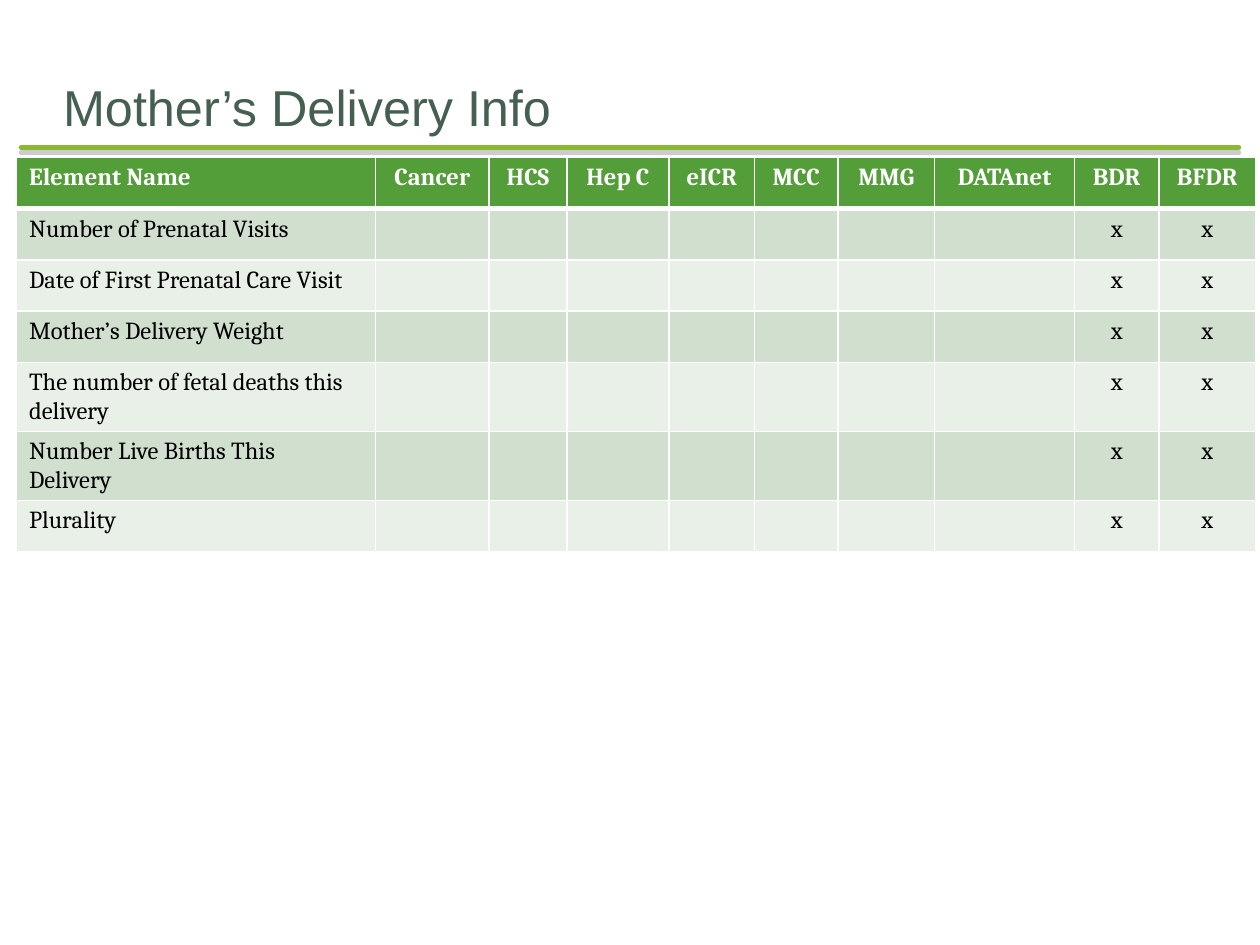
"""Builds the slide that shows which sources hold the mother's delivery elements."""
from dataclasses import dataclass

from lxml import etree
from pptx import Presentation
from pptx import util as u
from pptx.dml.color import RGBColor
from pptx.enum import shapes, text
from pptx.oxml import parse_xml
from pptx.oxml.ns import nsdecls, qn


@dataclass(frozen=True)
class Theme:
    heading_font: str = "Arial"
    table_font: str = "Cambria"
    heading_size: float = 28.8
    table_size: float = 14
    heading: str = "455F51"
    rule: str = "8AB833"
    rule_shadow: str = "808080"
    header_fill: str = "549E39"
    bands: tuple = ("D1DFCE", "E9F0E8")
    grid: str = "FFFFFF"
    header_text: str = "FFFFFF"
    body_text: str = "000000"


def write(frame, words, *, font, size, color, bold=False, align=text.PP_ALIGN.LEFT):
    paragraph = frame.paragraphs[0]
    paragraph.alignment = align
    run = paragraph.add_run()
    run.text = words
    run.font.name = font
    run.font.size = u.Pt(size)
    run.font.bold = bold
    run.font.color.rgb = RGBColor.from_string(color)


class SlideBuilder:
    def __init__(self, slide, theme):
        self.slide = slide
        self.theme = theme

    def title(self, words, left, top, width, height):
        heading = self.slide.shapes.title
        heading.left, heading.top = u.Pt(left), u.Pt(top)
        heading.width, heading.height = u.Pt(width), u.Pt(height)
        frame = heading.text_frame
        frame.auto_size = text.MSO_AUTO_SIZE.NONE
        frame.word_wrap = True
        frame.vertical_anchor = text.MSO_ANCHOR.BOTTOM
        frame.margin_left = frame.margin_right = frame.margin_bottom = 0
        frame.margin_top = u.Pt(3.6)
        write(frame, words, font=self.theme.heading_font,
              size=self.theme.heading_size, color=self.theme.heading)

    def rule(self, left, right, y, weight=3):
        divider = self.slide.shapes.add_connector(
            shapes.MSO_CONNECTOR.STRAIGHT, u.Pt(left), u.Pt(y), u.Pt(right), u.Pt(y))
        divider.line.color.rgb = RGBColor.from_string(self.theme.rule)
        divider.line.width = u.Pt(weight)
        properties = divider.element.spPr
        outline = properties.find(qn("a:ln"))
        outline.set("cap", "rnd")
        etree.SubElement(outline, qn("a:round"))
        properties.append(parse_xml(
            f'<a:effectLst {nsdecls("a")}><a:outerShdw blurRad="0" dist="{u.Pt(3)}" '
            f'dir="5400000" rotWithShape="0"><a:srgbClr val="{self.theme.rule_shadow}">'
            '<a:alpha val="40000"/></a:srgbClr></a:outerShdw></a:effectLst>'))

    def borders(self, cell, top, bottom):
        properties = cell._tc.get_or_add_tcPr()
        for side, weight in (("L", 1), ("R", 1), ("T", top), ("B", bottom)):
            properties.append(parse_xml(
                f'<a:ln{side} {nsdecls("a")} w="{u.Pt(weight)}"><a:solidFill>'
                f'<a:srgbClr val="{self.theme.grid}"/></a:solidFill></a:ln{side}>'))

    def table(self, rows, left, top, widths, row_height):
        theme = self.theme
        matrix = self.slide.shapes.add_table(
            len(rows), len(widths), u.Pt(left), u.Pt(top),
            u.Pt(sum(widths)), u.Pt(row_height * len(rows))).table
        for column, width in zip(matrix.columns, widths):
            column.width = u.Pt(width)
        for r, row in enumerate(rows):
            matrix.rows[r].height = u.Pt(row_height)
            header = r == 0
            fill = theme.header_fill if header else theme.bands[(r - 1) % 2]
            for c, words in enumerate(row):
                cell = matrix.cell(r, c)
                self.borders(cell, top=3 if r == 1 else 1, bottom=3 if header else 1)
                cell.fill.solid()
                cell.fill.fore_color.rgb = RGBColor.from_string(fill)
                if words:
                    write(cell.text_frame, words, font=theme.table_font,
                          size=theme.table_size, bold=header,
                          color=theme.header_text if header else theme.body_text,
                          align=text.PP_ALIGN.CENTER if c else text.PP_ALIGN.LEFT)


def main():
    deck = Presentation()
    deck.slide_width, deck.slide_height = u.Pt(720), u.Pt(540)
    builder = SlideBuilder(deck.slides.add_slide(deck.slide_layouts[5]), Theme())

    sources = ["Cancer", "HCS", "Hep C", "eICR", "MCC", "MMG", "DATAnet", "BDR", "BFDR"]
    holders = {"BDR", "BFDR"}
    elements = ["Number of Prenatal Visits", "Date of First Prenatal Care Visit",
                "Mother’s Delivery Weight", "The number of fetal deaths this delivery",
                "Number Live Births This Delivery", "Plurality"]
    marks = ["x" if source in holders else "" for source in sources]
    rows = [["Element Name", *sources]] + [[element, *marks] for element in elements]

    builder.rule(12.2, 707.8, 84.2)
    builder.title("Mother’s Delivery Info", 36, 36, 648, 41.8)
    builder.table(rows, left=9.4, top=90, row_height=29.3,
                  widths=[205.2, 64.8, 44.6, 58.3, 49, 47.5, 55.4, 79.9, 48.2, 55.4])
    deck.save("out.pptx")


if __name__ == "__main__":
    main()
